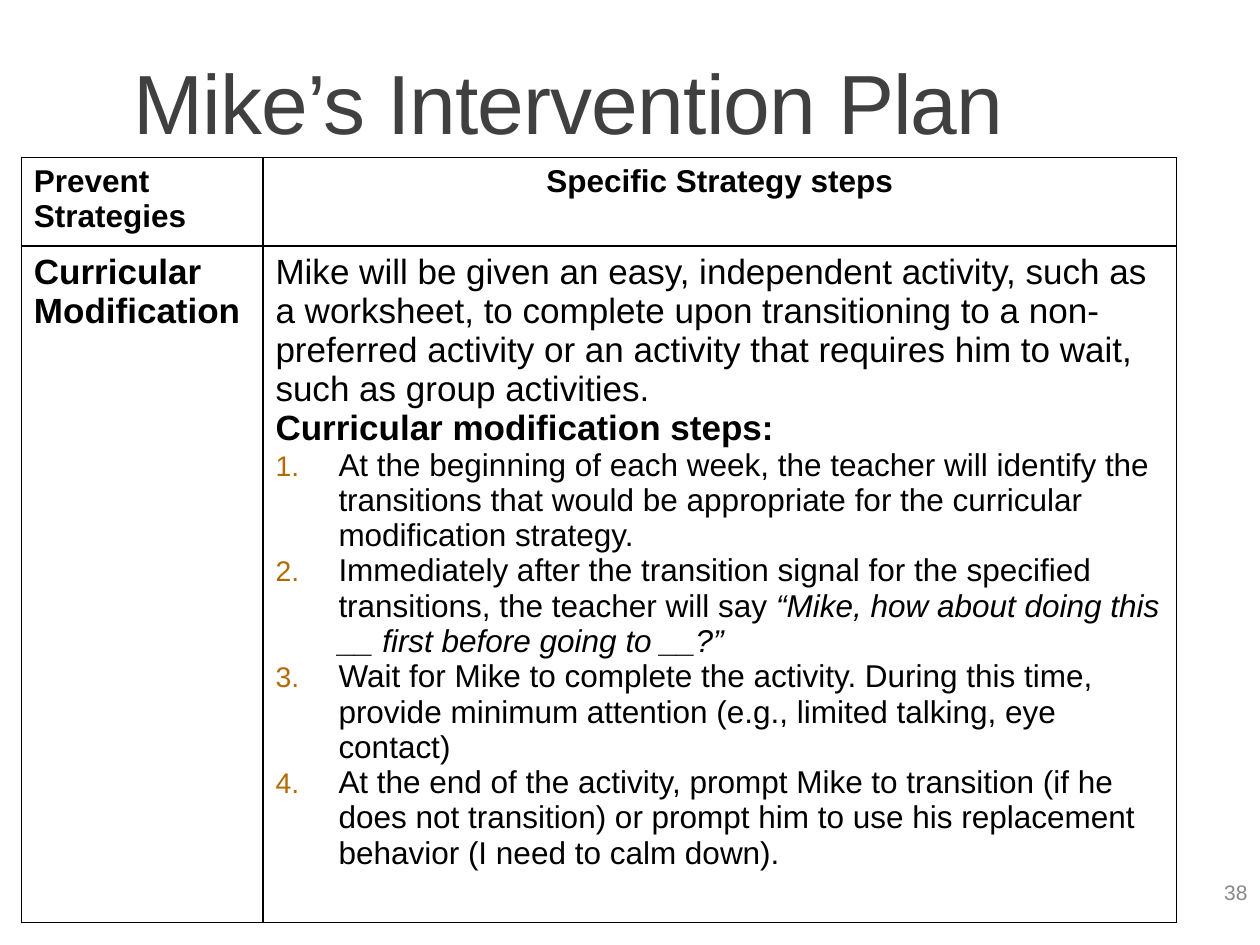
from dataclasses import dataclass

from lxml.etree import SubElement
from pptx import Presentation
from pptx.dml.color import RGBColor
from pptx.enum.text import MSO_ANCHOR as Anchor, MSO_AUTO_SIZE as AutoSize, PP_ALIGN as Align
from pptx.oxml.ns import qn
from pptx.util import Cm, Pt


@dataclass(frozen=True)
class Theme:
    font: str = "Arial"
    title_color: str = "404040"
    text_color: str = "000000"
    number_color: str = "B26B02"
    page_color: str = "898989"
    border_color: str = "000000"
    title_size: int = 48
    lead_size: int = 20
    step_size: int = 18
    page_size: int = 12


THEME = Theme()
STEP_INDENT = Cm(1.27)
TITLE_BOX = Cm(2.44), Cm(0), Cm(20.32), Cm(3.18)
PLAN_BOX = Cm(0.43), Cm(3.18), Cm(23.29), Cm(15.42)
PAGE_BOX = Cm(20.12), Cm(17.35), Cm(5.28), Cm(1.27)

HEADINGS = "Prevent Strategies", "Specific Strategy steps"
STRATEGY = "Curricular Modification"
SUMMARY = (
    "Mike will be given an easy, independent activity, such as a worksheet, to complete "
    "upon transitioning to a non-preferred activity or an activity that requires him to "
    "wait, such as group activities."
)
STEPS_HEADING = "Curricular modification steps:"
# Each step is its plain text and the quotation that follows it.
STEPS = [
    ("At the beginning of each week, the teacher will identify the transitions that would "
     "be appropriate for the curricular modification strategy.", ""),
    ("Immediately after the transition signal for the specified transitions, the teacher "
     "will say ", "“Mike, how about doing this __ first before going to __?”"),
    ("Wait for Mike to complete the activity. During this time, provide minimum attention "
     "(e.g., limited talking, eye contact)", ""),
    ("At the end of the activity, prompt Mike to transition (if he does not transition) or "
     "prompt him to use his replacement behavior (I need to calm down).", ""),
]


def add_run(paragraph, text, size, color=THEME.text_color, **formats):
    run = paragraph.add_run()
    run.text = text
    formats = {"name": THEME.font, "size": Pt(size), **formats}
    for attribute, value in formats.items():
        setattr(run.font, attribute, value)
    run.font.color.rgb = RGBColor.from_string(color)
    return run


def number_paragraph(paragraph):
    properties = paragraph._p.get_or_add_pPr()
    properties.set("marL", str(STEP_INDENT))
    properties.set("indent", str(-STEP_INDENT))
    color = SubElement(properties, qn("a:buClr"))
    SubElement(color, qn("a:srgbClr"), val=THEME.number_color)
    SubElement(properties, qn("a:buSzPct"), val="90000")
    SubElement(properties, qn("a:buFont"), typeface=THEME.font)
    SubElement(properties, qn("a:buAutoNum"), type="arabicPeriod")


def frame_cell(cell):
    properties = cell._tc.get_or_add_tcPr()
    for side in ("lnL", "lnR", "lnT", "lnB"):
        line = SubElement(properties, qn(f"a:{side}"), w=str(Pt(1)))
        fill = SubElement(line, qn("a:solidFill"))
        SubElement(fill, qn("a:srgbClr"), val=THEME.border_color)
    cell.fill.background()


def add_title(slide, box):
    title = slide.shapes.title
    title.left, title.top, title.width, title.height = box
    frame = title.text_frame
    frame.word_wrap = True
    frame.auto_size = AutoSize.NONE
    frame.vertical_anchor = Anchor.BOTTOM
    heading = frame.paragraphs[0]
    heading.alignment = Align.LEFT
    heading.line_spacing = 0.85
    run = add_run(heading, "Mike’s Intervention Plan", THEME.title_size, THEME.title_color)
    run.font._element.set("spc", "-50")


def fill_steps(frame):
    add_run(frame.paragraphs[0], SUMMARY, THEME.lead_size)
    add_run(frame.add_paragraph(), STEPS_HEADING, THEME.lead_size, bold=True)
    for instruction, quotation in STEPS:
        step = frame.add_paragraph()
        number_paragraph(step)
        add_run(step, instruction, THEME.step_size)
        if quotation:
            add_run(step, quotation, THEME.step_size, italic=True)


def add_plan(slide, box):
    left, top, width, height = box
    plan = slide.shapes.add_table(2, 2, left, top, width, height).table
    plan.first_row = plan.horz_banding = False
    plan.columns[0].width = Cm(4.87)
    plan.columns[1].width = width - Cm(4.87)
    plan.rows[0].height = Cm(1.78)
    plan.rows[1].height = height - Cm(1.78)
    for cell in plan.iter_cells():
        frame_cell(cell)

    for column, heading in enumerate(HEADINGS):
        paragraph = plan.cell(0, column).text_frame.paragraphs[0]
        paragraph.alignment = Align.CENTER if column else Align.LEFT
        add_run(paragraph, heading, THEME.step_size, bold=True)
    strategy = plan.cell(1, 0).text_frame.paragraphs[0]
    add_run(strategy, STRATEGY, THEME.lead_size, bold=True)
    fill_steps(plan.cell(1, 1).text_frame)


def add_page_number(slide, box):
    frame = slide.shapes.add_textbox(*box).text_frame
    frame.word_wrap = True
    frame.vertical_anchor = Anchor.MIDDLE
    page = frame.paragraphs[0]
    page.alignment = Align.RIGHT
    add_run(page, "38", THEME.page_size, THEME.page_color)


def main():
    deck = Presentation()
    deck.slide_width, deck.slide_height = Cm(25.4), Cm(19.05)
    slide = deck.slides.add_slide(deck.slide_layouts.get_by_name("Title Only"))
    add_title(slide, TITLE_BOX)
    add_plan(slide, PLAN_BOX)
    add_page_number(slide, PAGE_BOX)
    deck.save("out.pptx")


if __name__ == "__main__":
    main()
